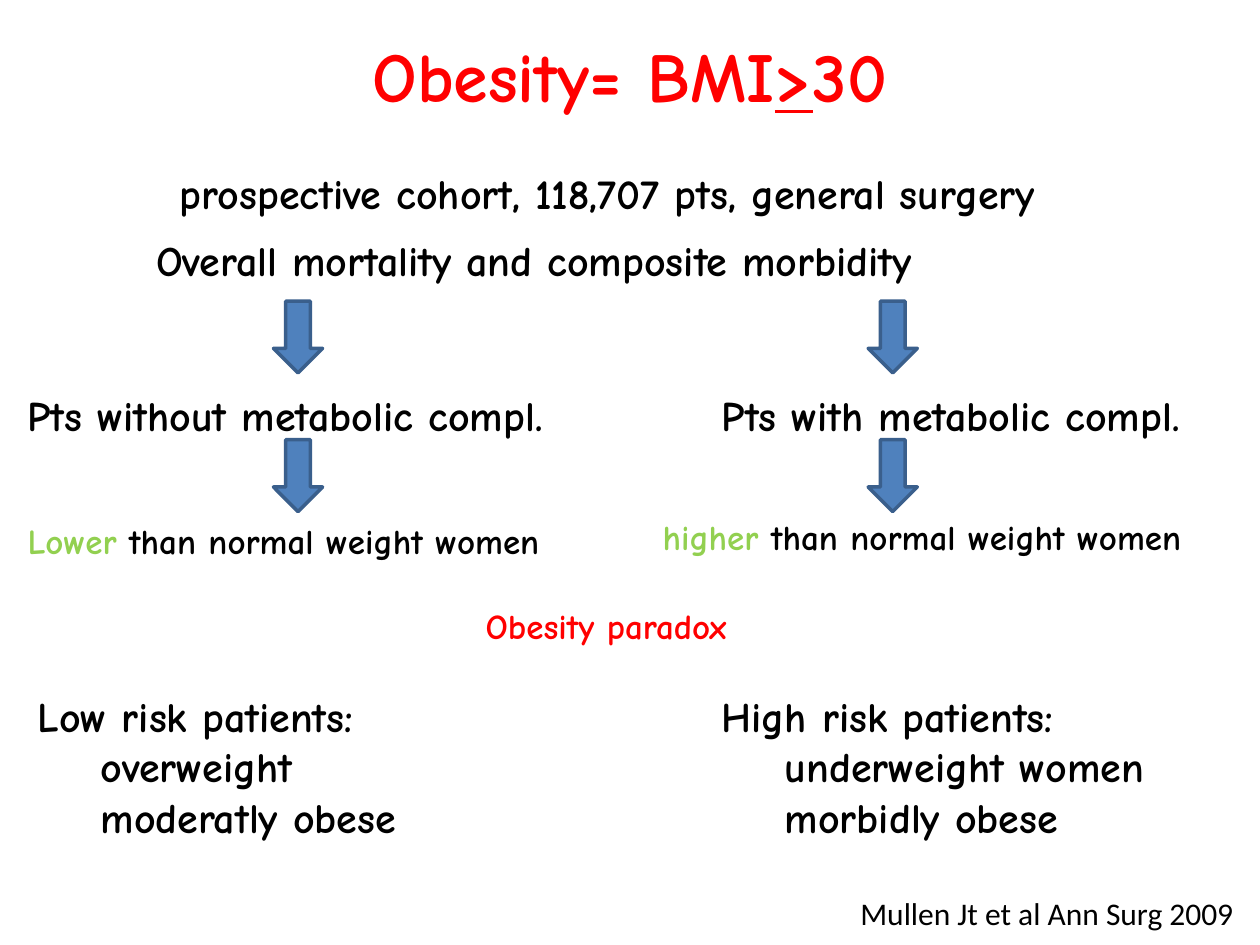
import dataclasses
import pptx
import pptx.dml.color
import pptx.enum.shapes
import pptx.enum.text
import pptx.util

Inches = pptx.util.Inches
Align = pptx.enum.text.PP_ALIGN


@dataclasses.dataclass(frozen=True)
class Theme:
    """Colours, fonts and type sizes of the slide."""
    black: str = "000000"
    red: str = "FF0000"
    green: str = "92D050"
    arrow_fill: str = "4F81BD"
    arrow_line: str = "3A5F8C"
    hand_font: str = "Comic Neue"
    source_font: str = "Calibri"
    title: int = 40
    body: int = 24
    detail: int = 20
    source: int = 18


THEME = Theme()


def colour(value):
    """Turn a hex string into a colour."""
    return pptx.dml.color.RGBColor.from_string(value)


def run(text, size=THEME.body, ink=THEME.black, underline=None):
    """Describe one run of text."""
    return text, size, ink, underline


def add_text(slide, box, paragraphs, align=None, font=THEME.hand_font, bold=True,
             wrap=True, anchor=pptx.enum.text.MSO_ANCHOR.TOP):
    """Place a text box holding paragraphs, each a list of runs."""
    shape = slide.shapes.add_textbox(*map(Inches, box))
    frame = shape.text_frame
    frame.word_wrap = wrap
    frame.vertical_anchor = anchor
    for index, runs in enumerate(paragraphs):
        paragraph = frame.add_paragraph() if index else frame.paragraphs[0]
        paragraph.alignment = align
        for text, size, ink, underline in runs:
            piece = paragraph.add_run()
            piece.text = text
            piece.font.name = font
            piece.font.size = pptx.util.Pt(size)
            piece.font.bold = bold
            piece.font.underline = underline
            piece.font.color.rgb = colour(ink)


def add_down_arrow(slide, box):
    """Place one block arrow pointing down."""
    arrow = slide.shapes.add_shape(
        pptx.enum.shapes.MSO_SHAPE.DOWN_ARROW, *map(Inches, box))
    arrow.shadow.inherit = False
    arrow.fill.solid()
    arrow.fill.fore_color.rgb = colour(THEME.arrow_fill)
    arrow.line.color.rgb = colour(THEME.arrow_line)
    arrow.line.width = pptx.util.Pt(2)


def add_header(slide, box):
    """Place the title and the two lines describing the study."""
    left, top, width, height = box
    title = [run(text, THEME.title, THEME.red, underline)
             for text, underline in (("Obesity= BMI", None), (">", True), ("30", None))]
    add_text(slide, (left, top, width, height), [title], Align.CENTER,
             anchor=pptx.enum.text.MSO_ANCHOR.MIDDLE)
    add_text(slide, (left + 0.43, top + 1.23, 8.9, 0.5),
             [[run("prospective cohort, 118,707 pts, general surgery ")]], Align.CENTER)
    add_text(slide, (left + 1.14, top + 1.76, 8.03, 0.5),
             [[run("Overall mortality and composite morbidity")]])


def add_outcome(slide, box, arrow_left, group, result, result_left, result_top):
    """Place a patient group, its arrows and its result."""
    left, top, width, height = box
    for arrow_top in (top, top + 1.1):
        add_down_arrow(slide, (arrow_left, arrow_top, 0.39, 0.57))
    add_text(slide, (left, top + 0.65, width, height), [[run(group)]])
    add_text(slide, (result_left, result_top, width, height), [[
        run(result, THEME.detail, THEME.green),
        run(" than normal weight women", THEME.detail),
        run(" "),
    ]])


def add_paradox(slide, box):
    """Place the centred conclusion."""
    add_text(slide, box, [[run("Obesity paradox ", THEME.detail, THEME.red), run(" ")]],
             Align.CENTER)


def add_risk_list(slide, box, heading, patients):
    """Place a risk heading with its tabbed patient types."""
    lines = [heading] + ["\t" + patient for patient in patients]
    add_text(slide, box, [[run(line)] for line in lines])


def add_source(slide, box):
    """Place the literature reference."""
    add_text(slide, box, [[run("Mullen Jt et al Ann Surg 2009", THEME.source)]],
             font=THEME.source_font, bold=False, wrap=False)


def main():
    """Build and save the slide."""
    presentation = pptx.Presentation()
    presentation.slide_width = Inches(10)
    presentation.slide_height = Inches(7.5)
    slide = presentation.slides.add_slide(presentation.slide_layouts[6])
    add_header(slide, (0, 0.05, 10, 1.09))
    add_outcome(slide, (0.12, 2.39, 4.88, 0.5), 2.17,
                "Pts without metabolic compl.", "Lower", 0.12, 4.02)
    add_outcome(slide, (5.63, 2.39, 4.88, 0.5), 6.89,
                "Pts with metabolic compl.", "higher", 5.16, 3.99)
    add_paradox(slide, (2.48, 4.69, 4.88, 0.5))
    add_risk_list(slide, (0.2, 5.43, 4.88, 1.31), "Low risk patients:",
                  ["overweight", "moderatly obese"])
    add_risk_list(slide, (5.63, 5.43, 4.88, 1.31), "High risk patients:",
                  ["underweight women", "morbidly obese"])
    add_source(slide, (6.73, 7.05, 3.2, 0.4))
    presentation.save("out.pptx")


if __name__ == "__main__":
    main()
